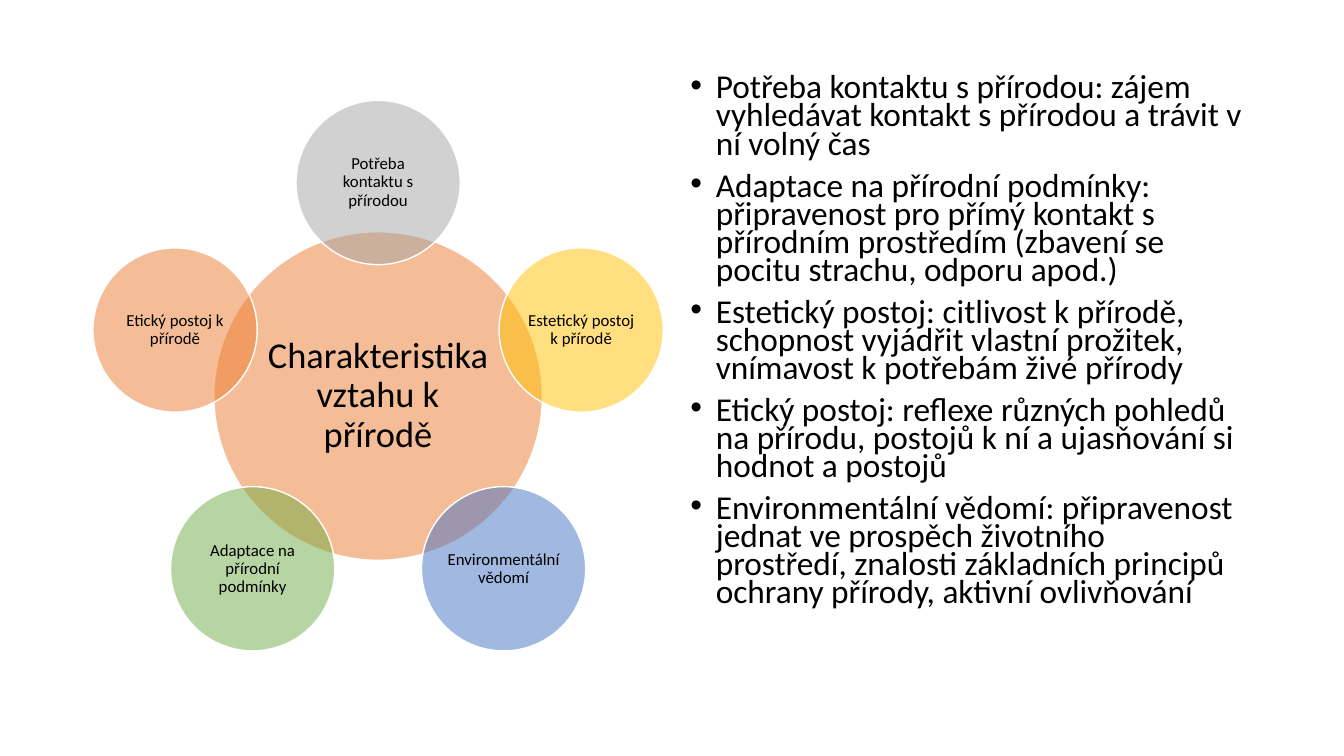
from dataclasses import dataclass
from math import cos, radians, sin

from lxml import etree
from pptx import Presentation
from pptx.dml.color import RGBColor
from pptx.enum.shapes import MSO_SHAPE
from pptx.enum.text import MSO_ANCHOR, MSO_AUTO_SIZE, PP_ALIGN
from pptx.oxml.ns import qn
from pptx.shapes.group import GroupShape
from pptx.text.text import TextFrame
from pptx.util import Cm, Pt

OVAL = MSO_SHAPE.OVAL
MIDDLE, TOP = MSO_ANCHOR.MIDDLE, MSO_ANCHOR.TOP
CENTER, LEFT = PP_ALIGN.CENTER, PP_ALIGN.LEFT
NO_FIT = MSO_AUTO_SIZE.NONE


@dataclass(frozen=True)
class Theme:
    font: str = "Calibri"
    ink: str = "000000"
    rim: str = "FFFFFF"
    orange: str = "ED7D31"
    gray: str = "A5A5A5"
    gold: str = "FFC000"
    blue: str = "4472C4"
    green: str = "70AD47"
    alpha: int = 50
    hub_size: float = 26
    petal_size: float = 12
    list_size: float = 23.8


@dataclass(frozen=True)
class Disc:
    label: str
    color: str
    x: float
    y: float
    width: float
    size: float
    inset: float


THEME = Theme()

# Wheel measures in centimetres
HUB_X, HUB_Y = 9.53, 9.98
HUB_WIDTH, PETAL_WIDTH = 8.28, 4.14
ORBIT = 5.38

# Petals run clockwise from the top
PETALS = [
    ("Potřeba kontaktu s přírodou", THEME.gray),
    ("Estetický postoj k přírodě", THEME.gold),
    ("Environmentální vědomí", THEME.blue),
    ("Adaptace na přírodní podmínky", THEME.green),
    ("Etický postoj k přírodě", THEME.orange),
]

POINTS = [
    "Potřeba kontaktu s přírodou: zájem vyhledávat kontakt s přírodou a trávit v ní volný čas",
    "Adaptace na přírodní podmínky: připravenost pro přímý kontakt s přírodním prostředím "
    "(zbavení se pocitu strachu, odporu apod.)",
    "Estetický postoj: citlivost k přírodě, schopnost vyjádřit vlastní prožitek, "
    "vnímavost k potřebám živé přírody",
    "Etický postoj: reflexe různých pohledů na přírodu, postojů k ní a ujasňování si "
    "hodnot a postojů",
    "Environmentální vědomí: připravenost jednat ve prospěch životního prostředí, "
    "znalosti základních principů ochrany přírody, aktivní ovlivňování",
]


def write(frame: TextFrame, lines: list[str], *, size: float, align=LEFT, anchor=TOP,
          inset: tuple[float, float] = (0.25, 0.13), spacing: float = 0.9,
          before: float = 0, bullet: str = "", indent: float = 0) -> None:
    frame.word_wrap = True
    frame.auto_size = NO_FIT
    frame.vertical_anchor = anchor
    frame.margin_left = frame.margin_right = Cm(inset[0])
    frame.margin_top = frame.margin_bottom = Cm(inset[1])
    for i, line in enumerate(lines):
        para = frame.add_paragraph() if i else frame.paragraphs[0]
        para.text = line
        if bullet:
            props = para._p.get_or_add_pPr()
            props.set("marL", str(Cm(indent)))
            props.set("indent", str(-Cm(indent)))
            etree.SubElement(props, qn("a:buFont"), typeface="Arial")
            etree.SubElement(props, qn("a:buChar"), char=bullet)
        para.alignment = align
        para.line_spacing = spacing
        para.space_before = Pt(before if i else 0)
        para.font.name = THEME.font
        para.font.size = Pt(size)
        para.font.color.rgb = RGBColor.from_string(THEME.ink)


def draw(group: GroupShape, disc: Disc) -> None:
    half = disc.width / 2
    shape = group.shapes.add_shape(OVAL, Cm(disc.x - half), Cm(disc.y - half),
                                   Cm(disc.width), Cm(disc.width))
    shape.shadow.inherit = False
    shape.fill.solid()
    shape.fill.fore_color.rgb = RGBColor.from_string(disc.color)
    tint = shape._element.spPr.find(qn("a:solidFill")).find(qn("a:srgbClr"))
    etree.SubElement(tint, qn("a:alpha"), val=str(THEME.alpha * 1000))
    shape.line.color.rgb = RGBColor.from_string(THEME.rim)
    shape.line.width = Pt(1)
    write(shape.text_frame, [disc.label], size=disc.size, align=CENTER,
          anchor=MIDDLE, inset=(disc.inset, disc.inset))


def main() -> None:
    deck = Presentation()
    deck.slide_width, deck.slide_height = Cm(33.87), Cm(19.05)
    slide = deck.slides.add_slide(deck.slide_layouts[1])
    title = slide.shapes.title._element
    title.getparent().remove(title)

    # List on the right
    body = slide.placeholders[1]
    body.left, body.top = Cm(17.15), Cm(1.8)
    body.width, body.height = Cm(14.4), Cm(15.37)
    write(body.text_frame, POINTS, size=THEME.list_size, spacing=0.7,
          before=10, bullet="•", indent=0.64)

    # Wheel on the left
    wheel = slide.shapes.add_group_shape()
    draw(wheel, Disc("Charakteristika vztahu k přírodě", THEME.orange,
                     HUB_X, HUB_Y, HUB_WIDTH, THEME.hub_size, 0.1))
    for i, (label, color) in enumerate(PETALS):
        angle = radians(i * 360 / len(PETALS))
        draw(wheel, Disc(label, color, HUB_X + ORBIT * sin(angle),
                         HUB_Y - ORBIT * cos(angle), PETAL_WIDTH,
                         THEME.petal_size, 0.05))

    deck.save("out.pptx")


if __name__ == "__main__":
    main()
